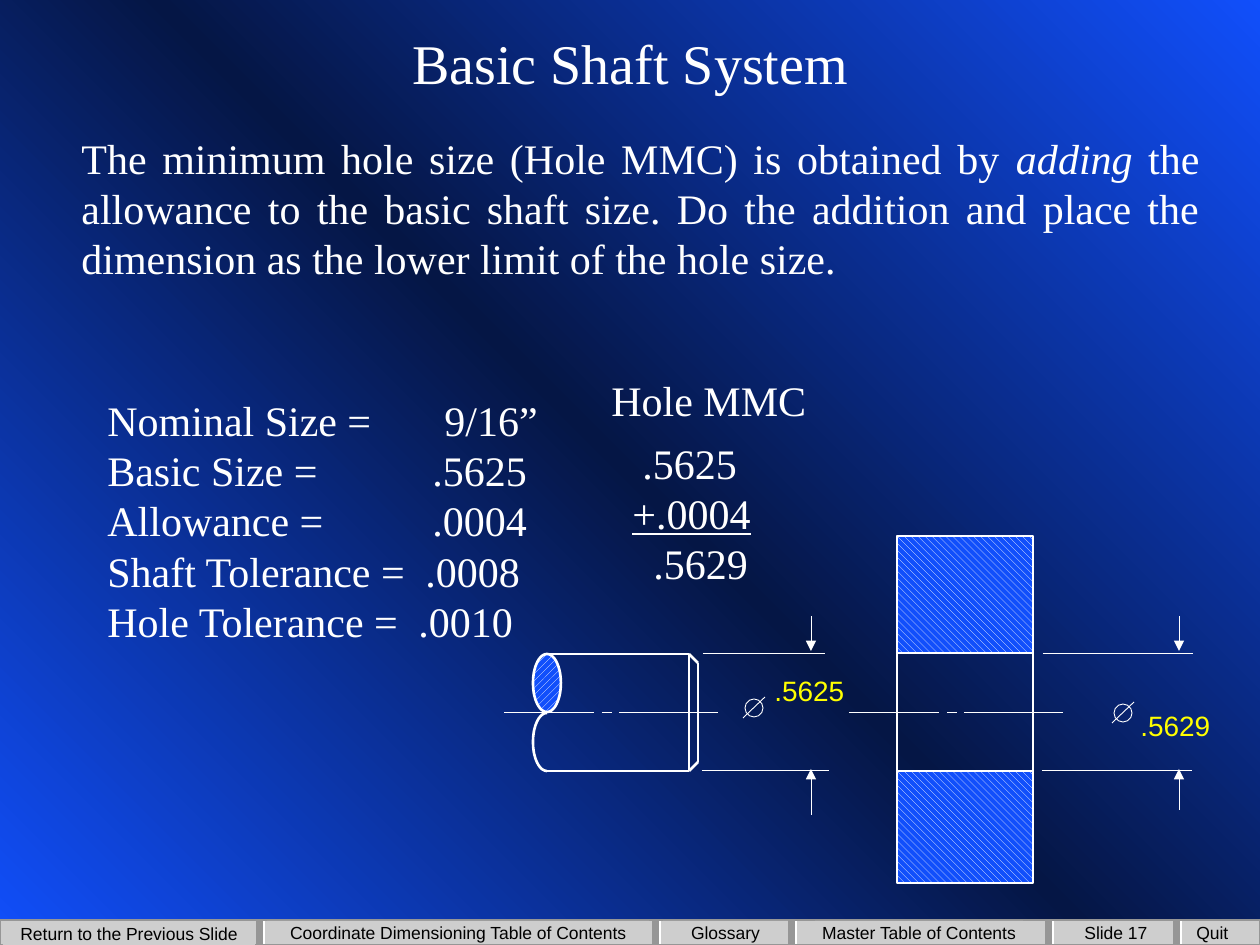
import math
from copy import deepcopy

from lxml import etree
from pptx import Presentation
from pptx.dml.color import RGBColor
from pptx.enum.dml import MSO_PATTERN
from pptx.enum.shapes import MSO_CONNECTOR, MSO_SHAPE
from pptx.enum.text import MSO_ANCHOR, PP_ALIGN
from pptx.oxml.ns import qn
from pptx.util import Emu, Pt

EMU_PER_PX = 914400 / 126
CURVE_UNITS_PER_PX = 10

WHITE = RGBColor(0xFF, 0xFF, 0xFF)
BLACK = RGBColor(0x00, 0x00, 0x00)
YELLOW = RGBColor(0xFF, 0xFF, 0x00)
BLUE = RGBColor(0x11, 0x4F, 0xFB)
NAVY = RGBColor(0x05, 0x16, 0x45)
SILVER = RGBColor(0xCE, 0xCE, 0xCE)
GRAY = RGBColor(0x96, 0x96, 0x96)

RECTANGLE = MSO_SHAPE.RECTANGLE
OVAL = MSO_SHAPE.OVAL
STRAIGHT = MSO_CONNECTOR.STRAIGHT
HATCH_UP = MSO_PATTERN.WIDE_UPWARD_DIAGONAL
HATCH_DOWN = MSO_PATTERN.WIDE_DOWNWARD_DIAGONAL
LEFT, CENTER, JUSTIFY = PP_ALIGN.LEFT, PP_ALIGN.CENTER, PP_ALIGN.JUSTIFY
TOP, MIDDLE = MSO_ANCHOR.TOP, MSO_ANCHOR.MIDDLE

SERIF = {"name": "Times New Roman", "size": Pt(24)}
TITLE = {"name": "Times New Roman", "size": Pt(32)}
LABEL = {"name": "Arial", "size": Pt(16)}
BUTTON = {"name": "Arial", "size": Pt(10)}
OUTLINE, THIN = 1.5, 0.5


def px(value):
    return Emu(round(value * EMU_PER_PX))


def paint_background(slide):
    fill = slide.background.fill
    fill.gradient()
    fill.gradient_angle = 45
    first = fill.gradient_stops[0]._gs
    first.addnext(deepcopy(first))
    for stop, color, position in zip(fill.gradient_stops, (BLUE, NAVY, BLUE), (0, 0.5, 1)):
        stop.color.rgb = color
        stop.position = position


def add_line(slide, start, end, width, color=WHITE, arrow=False):
    """Draw a straight line; an arrow has its head at the start."""
    line = slide.shapes.add_connector(STRAIGHT, *map(px, (*start, *end)))
    line.line.color.rgb = color
    line.line.width = Pt(width)
    if arrow:
        etree.SubElement(line.line._get_or_add_ln(), qn("a:headEnd"), type="triangle")
    etree.SubElement(line._element.spPr, qn("a:effectLst"))


def style_shape(shape, fill=None, hatch=None, color=WHITE, width=None):
    shape.shadow.inherit = False
    if hatch:
        shape.fill.patterned()
        shape.fill.pattern = hatch
        shape.fill.fore_color.rgb = WHITE
        shape.fill.back_color.rgb = BLUE
    elif fill:
        shape.fill.solid()
        shape.fill.fore_color.rgb = fill
    else:
        shape.fill.background()
    if width:
        shape.line.color.rgb = color
        shape.line.width = Pt(width)
    else:
        shape.line.fill.background()


def add_preset(slide, kind, box, **style):
    shape = slide.shapes.add_shape(kind, *map(px, box))
    style_shape(shape, **style)
    return shape


def add_arc(slide, center, radii, start, end, **style):
    """Draw part of an ellipse between two angles in degrees."""
    points = [tuple((middle + radius * turn(math.radians(angle))) * CURVE_UNITS_PER_PX
                    for middle, radius, turn in zip(center, radii, (math.cos, math.sin)))
              for angle in range(start, end + 1, 5)]
    builder = slide.shapes.build_freeform(*points[0], scale=EMU_PER_PX / CURVE_UNITS_PER_PX)
    builder.add_line_segments(points[1:], close=end - start == 360)
    style_shape(builder.convert_to_shape(), **style)


def write_text(shape, paragraphs, font, color=WHITE, align=LEFT, anchor=TOP, wrap=True):
    """Fill a shape with paragraphs, each a list of (text, font extras) runs."""
    frame = shape.text_frame
    frame.word_wrap = wrap
    frame.vertical_anchor = anchor
    for index, runs in enumerate(paragraphs):
        paragraph = frame.paragraphs[0] if index == 0 else frame.add_paragraph()
        paragraph.alignment = align
        for text, extras in runs:
            run = paragraph.add_run()
            run.text = text
            run.font.color.rgb = color
            for name, value in {**font, **extras}.items():
                setattr(run.font, name, value)
    return frame.paragraphs


def add_text(slide, box, paragraphs, font, **layout):
    return write_text(slide.shapes.add_textbox(*map(px, box)), paragraphs, font, **layout)


def add_footer(slide, left, top):
    add_preset(slide, RECTANGLE, (left, top, 1260, 25), fill=SILVER, color=GRAY, width=1.25)
    for x in (262, 658, 794, 1051, 1179):
        for shift, color in ((0, WHITE), (-2, GRAY)):
            add_line(slide, (left + x + shift, top + 24), (left + x + shift, top + 1), 4, color)
    buttons = [("Return to the Previous Slide", 3, 2, 252),
               ("Coordinate Dimensioning Table of Contents", 267, 1, 382),
               ("Glossary", 663, 1, 125),
               ("Master Table of Contents", 815, 1, 208)]
    for text, x, y, width in buttons:
        button = add_preset(slide, RECTANGLE, (left + x, top + y, width, 23), fill=SILVER)
        write_text(button, [[(text, {})]], BUTTON, BLACK, CENTER, MIDDLE, wrap=False)
    for text, x, width in (("Slide 17", 1072, 94), ("Quit", 1184, 63)):
        add_text(slide, (left + x, top + 1, width, 23), [[(text, {})]], BUTTON,
                 color=BLACK, anchor=MIDDLE, wrap=False)


def add_center_line(slide, left, y):
    for start, end in ((0, 90), (98, 108), (115, 214)):
        add_line(slide, (left + start, y), (left + end, y), THIN)


def add_shaft(slide, left, top):
    add_arc(slide, (left + 43, top + 88), (14, 29), 90, 270, width=OUTLINE)
    add_arc(slide, (left + 43, top + 29), (14, 29), 0, 360, hatch=HATCH_UP, width=OUTLINE)
    for x1, y1, x2, y2 in ((43, 0, 185, 0), (43, 117, 185, 117), (185, 0, 185, 117),
                           (185, 0, 194, 9), (194, 9, 194, 108), (185, 117, 194, 108)):
        add_line(slide, (left + x1, top + y1), (left + x2, top + y2), OUTLINE)
    add_center_line(slide, left, top + 58)


def add_hole(slide, left, top):
    width, height = 136, 347
    for x in (0, width):
        add_line(slide, (left + x, top), (left + x, top + height), OUTLINE)
    for y in (0, 117, 235, height):
        add_line(slide, (left, top + y), (left + width, top + y), OUTLINE)
    add_center_line(slide, left - 48, top + 176)
    for y, part_height in ((0, 117), (235, 112)):
        add_preset(slide, RECTANGLE, (left, top + y, width, part_height),
                   hatch=HATCH_DOWN, width=OUTLINE)


def add_dimension(slide, left, top, widths, arrow_x, tail, symbol, label, value):
    """Draw two extension lines with arrows, a diameter sign and its value."""
    bottom = top + 117
    add_line(slide, (left, top), (left + widths[0], top), THIN)
    add_line(slide, (left - 1, bottom), (left - 1 + widths[1], bottom), THIN)
    x = left + arrow_x
    add_line(slide, (x, top - 2), (x, top - 37), THIN, arrow=True)
    add_line(slide, (x, bottom - 1), (x, bottom + tail), THIN, arrow=True)
    x, y = left + symbol[0], top + symbol[1]
    add_preset(slide, OVAL, (x, y, 18, 18), width=THIN)
    add_line(slide, (x + 20, y - 2), (x - 2, y + 19), THIN)
    add_text(slide, (left + label[0], top + label[1], 96, 46), [[(value, {})]], LABEL,
             color=YELLOW, wrap=False)


def add_sizes(slide, box):
    rows = [("Nominal Size =", "9/16”", 337), ("Basic Size =", ".5625", 325),
            ("Allowance =", ".0004", 325), ("Shaft Tolerance =", ".0008", 318),
            ("Hole Tolerance =", ".0010", 311)]
    lines = [[(f"{name}\t{value}", {})] for name, value, _ in rows]
    for paragraph, (_, _, stop) in zip(add_text(slide, box, lines, SERIF), rows):
        tabs = etree.SubElement(paragraph._p.get_or_add_pPr(), qn("a:tabLst"))
        etree.SubElement(tabs, qn("a:tab"), pos=str(px(stop)), algn="l")


def add_calculation(slide, left, top):
    add_text(slide, (left, top, 242, 64), [[("Hole MMC", {})]], SERIF)
    lines = [[(".5625", {})], [("+.0004", {"underline": True})], [(".5629", {})]]
    paragraphs = add_text(slide, (left + 10, top + 63, 155, 165), lines, SERIF)
    for paragraph, margin in zip(paragraphs, (21, 11, 32)):
        paragraph._p.get_or_add_pPr().set("marL", str(px(margin)))


def main():
    presentation = Presentation()
    presentation.slide_width, presentation.slide_height = px(1260), px(945)
    slide = presentation.slides.add_slide(presentation.slide_layouts[6])
    paint_background(slide)
    add_footer(slide, 0, 920)
    add_shaft(slide, 504, 654)
    add_hole(slide, 897, 536)
    add_dimension(slide, 703, 653, (122, 127), 108, 45, (42, 46), (59, 14), ".5625")
    add_dimension(slide, 1043, 653, (150, 150), 136, 40, (71, 51), (85, 49), ".5629")
    add_text(slide, (95, 10, 1071, 105), [[("Basic Shaft System", {})]], TITLE,
             align=CENTER, anchor=MIDDLE)
    add_text(slide, (69, 126, 1143, 179), [[
        ("The minimum hole size (Hole MMC) is obtained by ", {}),
        ("adding", {"italic": True}),
        (" the allowance to the basic shaft size. Do the addition and place the "
         "dimension as the lower limit of the hole size.", {})]], SERIF, align=JUSTIFY)
    add_sizes(slide, (95, 388, 460, 267))
    add_calculation(slide, 599, 368)
    presentation.save("out.pptx")


if __name__ == "__main__":
    main()
